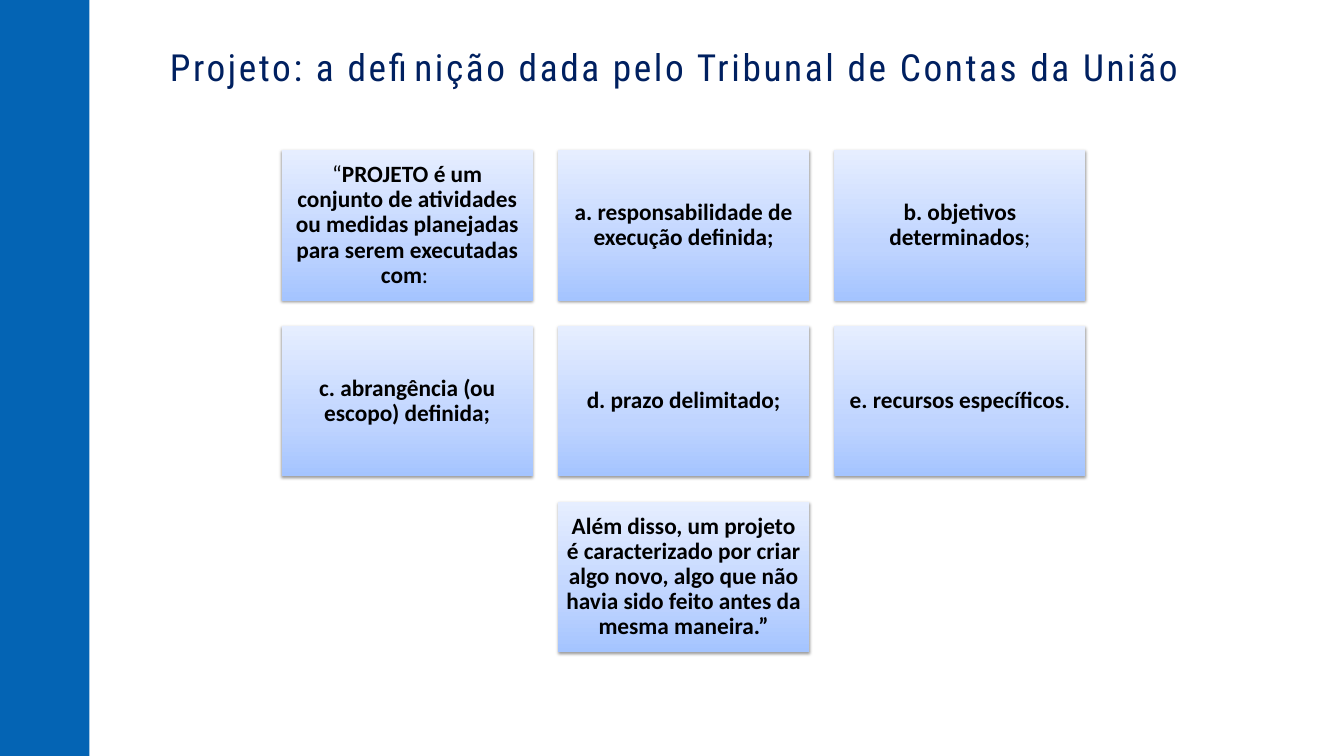
from copy import deepcopy

from lxml import etree
from pptx import Presentation
from pptx.dml.color import RGBColor
from pptx.enum import shapes, text
from pptx.oxml import parse_xml
from pptx.oxml.ns import nsdecls
from pptx.util import Pt

BLUE = RGBColor(0x04, 0x64, 0xB4)
NAVY = RGBColor(0x00, 0x20, 0x60)
BLACK = RGBColor(0x00, 0x00, 0x00)
WHITE = RGBColor(0xFF, 0xFF, 0xFF)
# Card gradient, from the bottom edge to the top
CARD_STOPS = [
    (0, RGBColor(0xA4, 0xC4, 0xFF)),
    (0.35, RGBColor(0xBF, 0xD4, 0xFF)),
    (1, RGBColor(0xE6, 0xEE, 0xFF)),
]

TITLE = "Projeto: a definição dada pelo Tribunal de Contas da União"
# Each card is a list of (text, bold) runs
CARDS = [
    [("“", False),
     ("PROJETO é um conjunto de atividades ou medidas planejadas "
      "para serem executadas com", True),
     (": ", False)],
    [("a. responsabilidade de execução definida;", True)],
    [("b. objetivos determinados", True), (";", False)],
    [("c. abrangência (ou escopo) definida;", True)],
    [("d. prazo delimitado;", True)],
    [("e. recursos específicos", True), (".", False)],
    [("Além disso, um projeto é caracterizado por criar algo novo, "
      "algo que não havia sido feito antes da mesma maneira.”", True)],
]
COLUMNS = 3


def set_margins(tf, size):
    tf.margin_left = tf.margin_top = tf.margin_right = tf.margin_bottom = size


def add_run(p, words, font, size, color, bold=False):
    r = p.add_run()
    r.text = words
    r.font.name = font
    r.font.size = size
    r.font.bold = bold
    r.font.color.rgb = color
    return r


def add_sidebar(s, left, top, width, height):
    sp = s.shapes.add_shape(shapes.MSO_SHAPE.RECTANGLE, left, top, width, height)
    sp.shadow.inherit = False
    sp.fill.solid()
    sp.fill.fore_color.rgb = BLUE
    sp.line.fill.background()


def add_title(s, left, top, width, height):
    sp = s.shapes.title
    sp.left, sp.top, sp.width, sp.height = left, top, width, height
    tf = sp.text_frame
    tf.word_wrap = True
    tf.auto_size = text.MSO_AUTO_SIZE.SHAPE_TO_FIT_TEXT
    tf.vertical_anchor = text.MSO_ANCHOR.TOP
    set_margins(tf, 0)
    p = tf.paragraphs[0]
    p.alignment = text.PP_ALIGN.CENTER
    r = add_run(p, TITLE, "Roboto Condensed", Pt(40), NAVY)
    r.font._element.set("spc", "280")  # letter spacing of 2.8 pt


def fill_card(sp):
    sp.fill.gradient()
    sp.fill.gradient_angle = 90
    stops = sp.fill.gradient_stops
    first = sp._element.spPr.find(".//{*}gs")
    first.addnext(deepcopy(first))
    stops = sp.fill.gradient_stops
    for stop, (position, color) in zip(stops, CARD_STOPS):
        stop.position = position
        stop.color.rgb = color


def add_card_shadow(sp):
    sp.shadow.inherit = False
    effects = sp._element.spPr.find("{*}effectLst")
    effects.append(parse_xml(
        f'<a:outerShdw {nsdecls("a")} blurRad="{Pt(3.1)}" dist="{Pt(1.6)}" '
        'dir="5400000" rotWithShape="0"><a:srgbClr val="000000">'
        '<a:alpha val="38000"/></a:srgbClr></a:outerShdw>'))


def add_card(s, runs, left, top, width, height):
    sp = s.shapes.add_shape(shapes.MSO_SHAPE.RECTANGLE, left, top, width, height)
    fill_card(sp)
    sp.line.fill.background()
    add_card_shadow(sp)
    tf = sp.text_frame
    tf.word_wrap = True
    tf.vertical_anchor = text.MSO_ANCHOR.MIDDLE
    set_margins(tf, Pt(7.2))
    p = tf.paragraphs[0]
    p.alignment = text.PP_ALIGN.CENTER
    p.line_spacing = 0.9
    for words, bold in runs:
        add_run(p, words, "Calibri", Pt(25), BLACK, bold)


def add_card_grid(s, left, top, width):
    # Gaps are a tenth of a card's width; cards are 5:3
    card_w = width / (COLUMNS + 0.1 * (COLUMNS - 1))
    card_h = 0.6 * card_w
    gap = 0.1 * card_w
    for i, runs in enumerate(CARDS):
        row, col = divmod(i, COLUMNS)
        in_row = min(COLUMNS, len(CARDS) - row * COLUMNS)
        indent = (COLUMNS - in_row) / 2  # centres a short last row
        add_card(s, runs,
                 int(left + (col + indent) * (card_w + gap)),
                 int(top + row * (card_h + gap)),
                 int(card_w), int(card_h))


def main():
    prs = Presentation()
    prs.slide_width, prs.slide_height = Pt(1440), Pt(810)
    s = prs.slides.add_slide(prs.slide_layouts[5])
    s.background.fill.solid()
    s.background.fill.fore_color.rgb = WHITE

    add_sidebar(s, Pt(-14.4), Pt(-18), Pt(110.2), Pt(842.4))
    add_card_grid(s, Pt(301.7), Pt(160.6), Pt(861.4))
    add_title(s, Pt(95.8), Pt(47.5), Pt(1254.2), Pt(48.2))
    prs.save("out.pptx")


if __name__ == "__main__":
    main()
